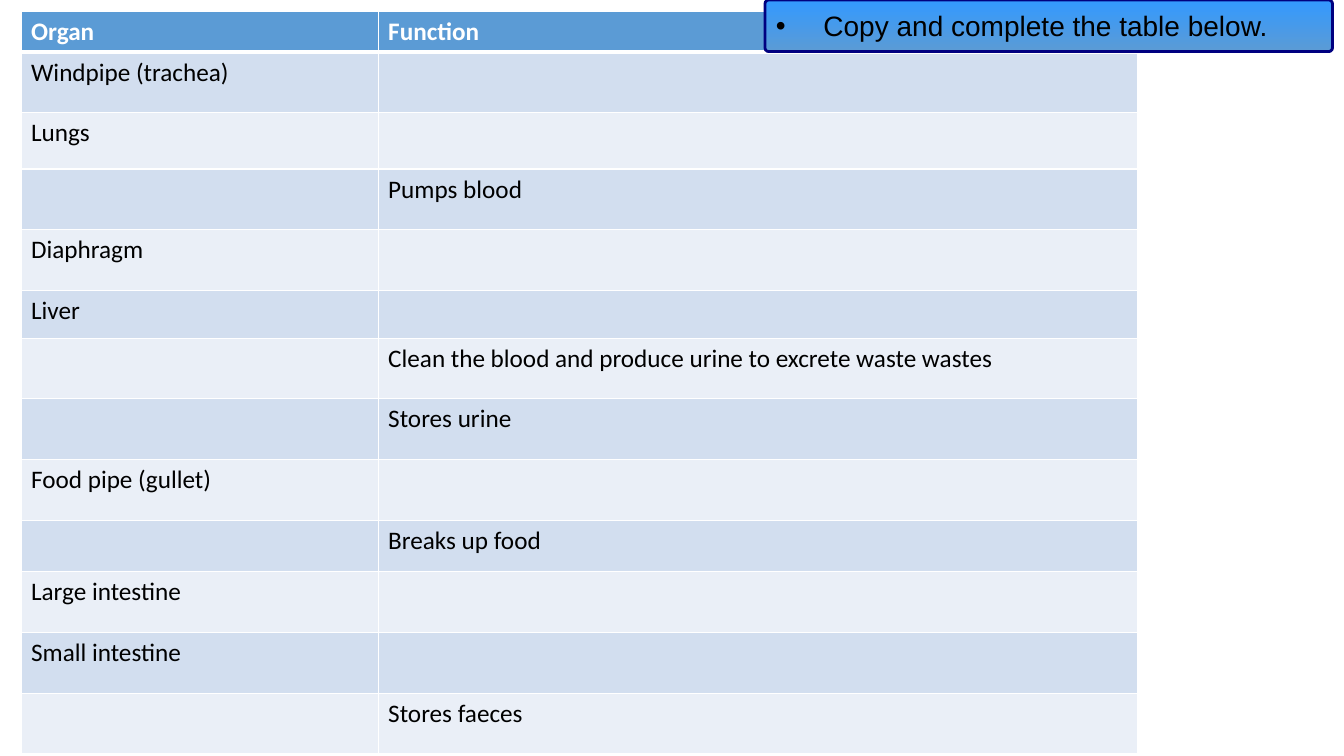
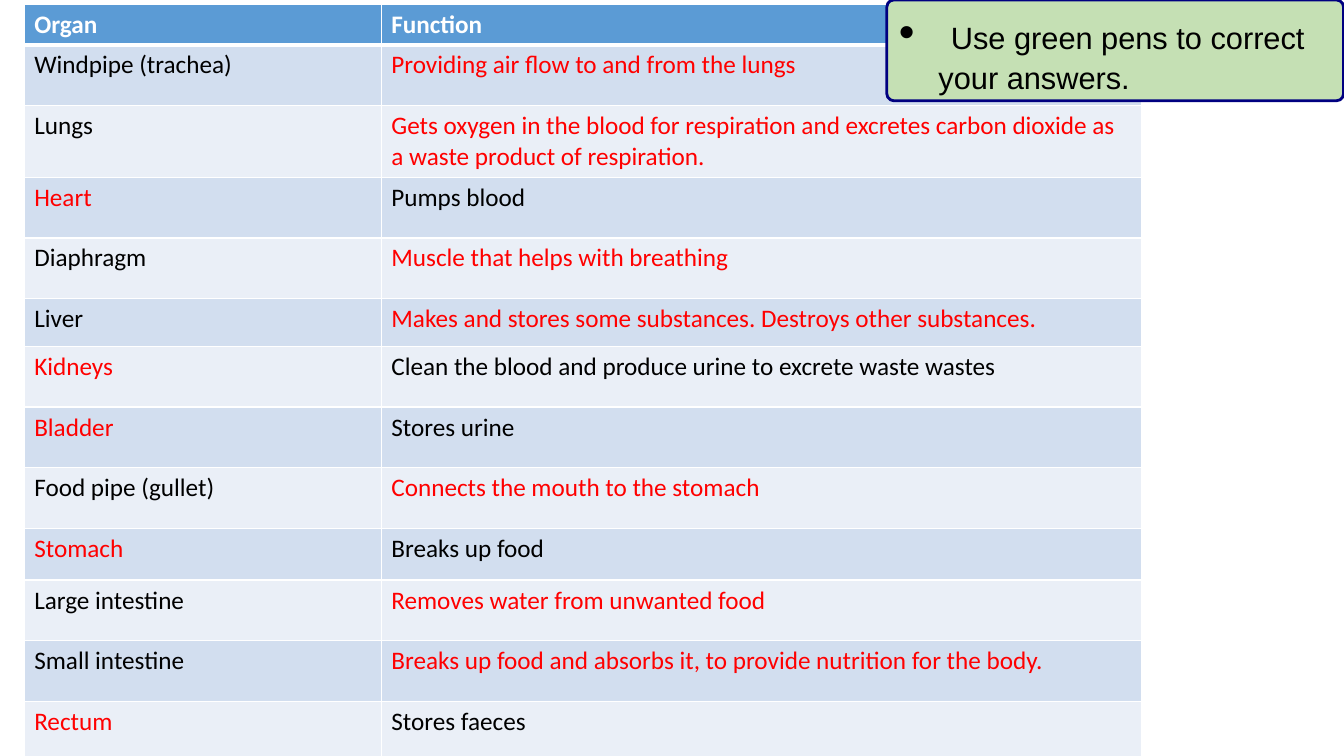
from lxml import etree
from pptx import Presentation
from pptx import util as u
from pptx.dml.color import RGBColor
from pptx.enum import shapes, text
from pptx.oxml.ns import qn

hues = {
    "head": "5B9BD5", "odd": "D2DEEF", "even": "EAEFF7",
    "white": "FFFFFF", "black": "000000", "red": "FF0000",
    "navy": "000080", "sky": "3399FF", "green": "C5E0B4",
}


def rgb(name):
    return RGBColor.from_string(hues[name])


def add_run(para, words, size, font, hue, bold=False):
    run = para.add_run()
    run.text = words
    run.font.size = u.Pt(size)
    run.font.name = font
    run.font.bold = bold
    run.font.color.rgb = rgb(hue)


# Organ, function, and which column is the answer (0 or 1)
organs = [
    ("Windpipe (trachea)", "Providing air flow to and from the lungs", 1),
    ("Lungs", "Gets oxygen in the blood for respiration and excretes "
              "carbon dioxide as a waste product of respiration.", 1),
    ("Heart", "Pumps blood", 0),
    ("Diaphragm", "Muscle that helps with breathing", 1),
    ("Liver", "Makes and stores some substances. Destroys other substances.", 1),
    ("Kidneys", "Clean the blood and produce urine to excrete waste wastes", 0),
    ("Bladder", "Stores urine", 0),
    ("Food pipe (gullet)", "Connects the mouth to the stomach", 1),
    ("Stomach", "Breaks up food", 0),
    ("Large intestine", "Removes water from unwanted food", 1),
    ("Small intestine",
     "Breaks up food and absorbs it, to provide nutrition for the body.", 1),
    ("Rectum", "Stores faeces", 0),
]
rows = [("Organ", "Function", None)] + organs
tall = 1.53
highs = {0: 0.89, 2: 1.42, 5: 1.2, 9: 1.3}
wides = [9, 19.15]

# One entry per slide: table corner, answers shown, note box and its text
pages = [
    {"at": (0.53, 0.28), "show": False, "box": (19.28, 0, 14.3, 1.3),
     "fill": ("sky", "head"), "gap": 20, "size": 20,
     "note": "Copy and complete the table below."},
    {"at": (0.61, 0.1), "show": True, "box": (22.35, 0, 11.51, 2.54),
     "fill": ("green",), "gap": 32, "size": 22,
     "note": "Use green pens to correct your answers."},
]

deck = Presentation()
deck.slide_width, deck.slide_height = u.Cm(33.87), u.Cm(19.05)

for page in pages:
    slide = deck.slides.add_slide(deck.slide_layouts[6])

    # Organ table
    left, top = page["at"]
    total = sum(highs.get(i, tall) for i in range(len(rows)))
    grid = slide.shapes.add_table(len(rows), 2, u.Cm(left), u.Cm(top),
                                  u.Cm(sum(wides)), u.Cm(total)).table
    for col, wide in zip(grid.columns, wides):
        col.width = u.Cm(wide)
    for i, (*words, answer) in enumerate(rows):
        grid.rows[i].height = u.Cm(highs.get(i, tall))
        for j, word in enumerate(words):
            cell = grid.cell(i, j)
            # White borders, thick between the header and the body
            props = cell._tc.get_or_add_tcPr()
            for side in "LRTB":
                thick = (i, side) in ((0, "B"), (1, "T"))
                line = etree.SubElement(props, qn(f"a:ln{side}"),
                                        w=str(u.Pt(3 if thick else 1)))
                paint = etree.SubElement(line, qn("a:solidFill"))
                etree.SubElement(paint, qn("a:srgbClr"), val=hues["white"])
            cell.fill.solid()
            cell.fill.fore_color.rgb = rgb(
                "head" if i == 0 else "odd" if i % 2 else "even")
            if j == answer and not page["show"]:
                continue
            hue = "white" if i == 0 else "red" if j == answer else "black"
            add_run(cell.text_frame.paragraphs[0], word, 18, "Calibri",
                    hue, i == 0)

    # Note box
    note = slide.shapes.add_shape(shapes.MSO_SHAPE.ROUNDED_RECTANGLE,
                                  *map(u.Cm, page["box"]))
    note.adjustments[0] = 0.07
    note.shadow.inherit = False
    note.line.color.rgb = rgb("navy")
    note.line.width = u.Pt(2)
    if len(page["fill"]) > 1:
        note.fill.gradient()
        note.fill.gradient_angle = 270
        for stop, hue in zip(note.fill.gradient_stops, page["fill"]):
            stop.color.rgb = rgb(hue)
    else:
        note.fill.solid()
        note.fill.fore_color.rgb = rgb(page["fill"][0])

    # Bulleted instruction
    frame = note.text_frame
    frame.word_wrap = True
    frame.vertical_anchor = text.MSO_ANCHOR.MIDDLE
    para = frame.paragraphs[0]
    para.alignment = text.PP_ALIGN.LEFT
    props = para._p.get_or_add_pPr()
    props.set("marL", str(u.Cm(1)))
    props.set("indent", str(u.Cm(-1)))
    etree.SubElement(props, qn("a:buFont"), typeface="Arial")
    etree.SubElement(props, qn("a:buChar"), char="•")
    add_run(para, " ", page["gap"], "Arial", "black", True)
    add_run(para, page["note"], page["size"], "Arial", "black")

deck.save("out.pptx")
